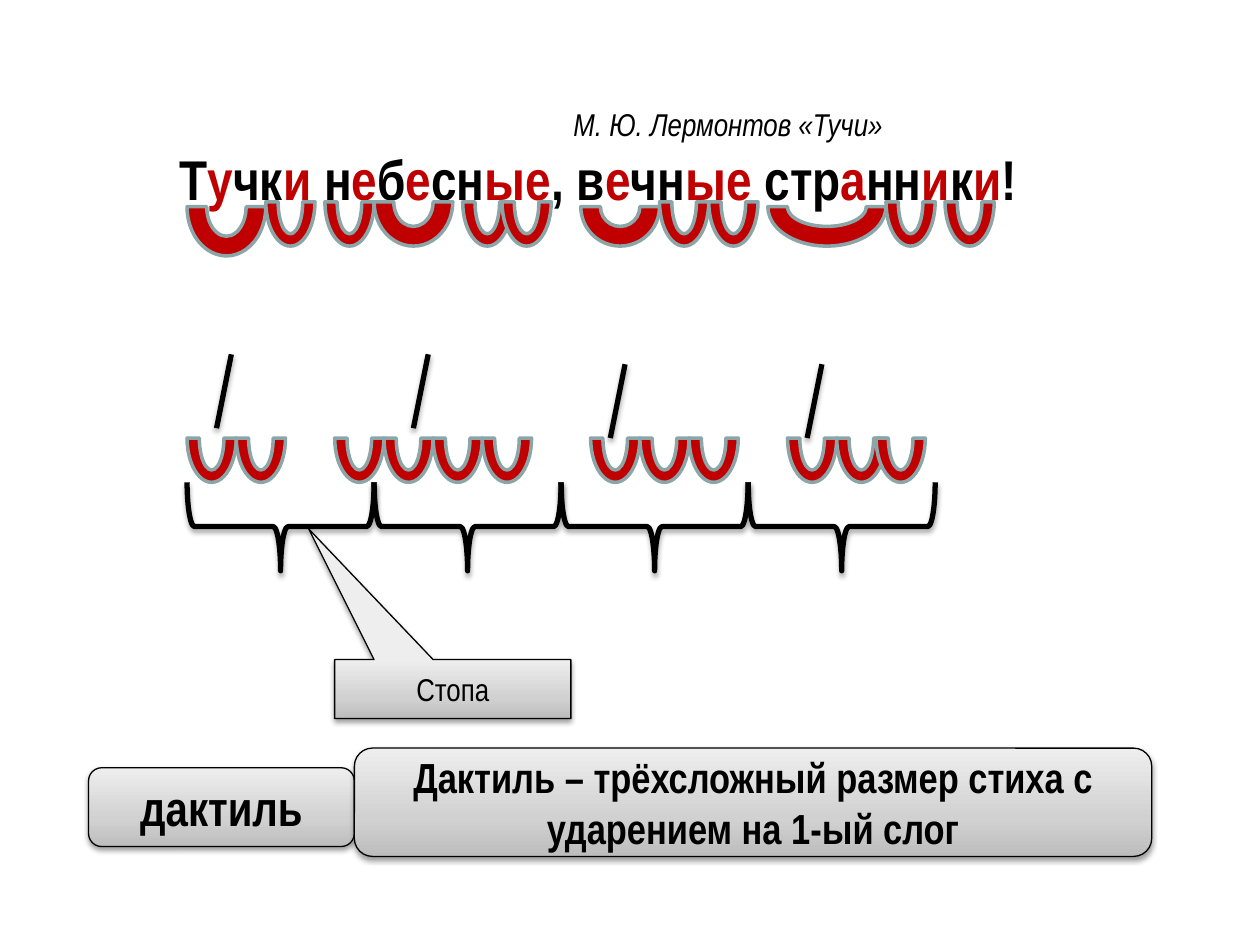
from dataclasses import dataclass
from pptx import Presentation
from pptx.dml.color import RGBColor
from pptx.enum.shapes import MSO_CONNECTOR, MSO_SHAPE
from pptx.enum.text import MSO_ANCHOR, MSO_AUTO_SIZE, PP_ALIGN
from pptx.oxml import parse_xml
from pptx.oxml.ns import nsdecls
from pptx.util import Cm, Pt


@dataclass(frozen=True)
class Theme:
    face: str = "Arial Narrow"
    ink: str = "000000"
    red: str = "C00000"
    rim: str = "8AA6A8"
    greys: tuple = ((0, "BDBDBD"), (35, "D1D1D1"), (100, "EEEEEE"))
    verse: int = 32
    term: int = 28
    rule: int = 24
    note: int = 18


THEME = Theme()
WIDE, HIGH = 128, 96
VERSE = "Т|у|чк|и| н|е|б|е|сн|ые|, в|е|чн|ые| стр|а|нн|и|к|и|!"
VERSE_ARCS = [
    (19, 16, 8, 10), (27, 16, 5, 9), (33, 16, 5, 9), (38, 16, 8, 9),
    (47, 16, 5, 9), (51, 16, 5, 9), (59, 17, 8, 8), (67, 16, 5, 9),
    (72, 16, 5, 9), (78, 17, 12, 8), (90, 16, 5, 9), (96, 16, 5, 9),
]
FOOT_ARCS = [19, 24, 34, 39, 44, 49, 60, 65, 70, 80, 85, 89]
STRESS = [(22, 36), (42, 36), (62, 37), (82, 37)]


def unit(num):
    return Cm(num * 25.4 / WIDE)


def place(*nums):
    return [unit(num) for num in nums]


def apply(item, form):
    for name, value in form.items():
        setattr(item, name, value)


def effect(shape, alpha=0, blur=3.1, dist=1.8):
    shade = ""
    if alpha:
        shade = (
            f'<a:outerShdw blurRad="{Pt(blur)}" dist="{Pt(dist)}" dir="5400000" '
            f'rotWithShape="0"><a:srgbClr val="{THEME.ink}">'
            f'<a:alpha val="{alpha * 1000}"/></a:srgbClr></a:outerShdw>'
        )
    xml = f'<a:effectLst {nsdecls("a")}>{shade}</a:effectLst>'
    shape._element.spPr.append(parse_xml(xml))


def outline(shape, color, width):
    shape.line.color.rgb = RGBColor.from_string(color)
    shape.line.width = Pt(width)


def blend(shape):
    stops = "".join(
        f'<a:gs pos="{pos * 1000}"><a:srgbClr val="{color}"/></a:gs>'
        for pos, color in THEME.greys
    )
    xml = (
        f'<a:gradFill {nsdecls("a")} rotWithShape="1"><a:gsLst>{stops}</a:gsLst>'
        '<a:lin ang="16200000" scaled="0"/></a:gradFill>'
    )
    shape._element.spPr.prstGeom.addnext(parse_xml(xml))


def write(line, text, size, color=THEME.ink, **form):
    run = line.add_run()
    run.text = text
    apply(run.font, {"name": THEME.face, "size": Pt(size), **form})
    run.font.color.rgb = RGBColor.from_string(color)


def add_text(slide, box):
    frame = slide.shapes.add_textbox(*place(*box)).text_frame
    apply(frame, {"word_wrap": True, "auto_size": MSO_AUTO_SIZE.SHAPE_TO_FIT_TEXT})
    return frame.paragraphs[0]


def add_arc(slide, box):
    arc = slide.shapes.add_shape(MSO_SHAPE.BLOCK_ARC, *place(*box))
    arc.rotation = 180
    arc.fill.solid()
    arc.fill.fore_color.rgb = RGBColor.from_string(THEME.red)
    outline(arc, THEME.rim, 2)
    effect(arc)


def add_stress(slide, left, top):
    ends = place(left + 1.5, top, left, top + 7.5)
    mark = slide.shapes.add_connector(MSO_CONNECTOR.STRAIGHT, *ends)
    outline(mark, THEME.ink, 3)
    effect(mark, 35)


def add_brace(slide, left):
    brace = slide.shapes.add_shape(MSO_SHAPE.RIGHT_BRACE, *place(left, 44, 9, 19))
    brace.rotation = 90
    brace.fill.background()
    outline(brace, THEME.ink, 3)
    effect(brace, 35)


def add_panel(slide, kind, box, text, size, **form):
    panel = slide.shapes.add_shape(kind, *place(*box))
    blend(panel)
    outline(panel, THEME.ink, 0.75)
    effect(panel, 38, dist=1.6)
    apply(panel.text_frame, {"word_wrap": True, "vertical_anchor": MSO_ANCHOR.MIDDLE})
    line = panel.text_frame.paragraphs[0]
    line.alignment = PP_ALIGN.CENTER
    write(line, text, size, **form)
    return panel


def main():
    deck = Presentation()
    apply(deck, {"slide_width": unit(WIDE), "slide_height": unit(HIGH)})
    slide = deck.slides.add_slide(deck.slide_layouts[6])

    verse = add_text(slide, (17, 14, 96, 8.2))
    for num, part in enumerate(VERSE.split("|")):
        color = THEME.red if num % 2 else THEME.ink
        write(verse, part, THEME.verse, color, bold=True)

    for box in VERSE_ARCS + [(left, 40, 5, 9) for left in FOOT_ARCS]:
        add_arc(slide, box)
    for left, top in STRESS:
        add_stress(slide, left, top)
    for num in range(4):
        add_brace(slide, 24 + 19 * num)

    foot = add_panel(slide, MSO_SHAPE.RECTANGULAR_CALLOUT, (34, 67, 24, 6),
                     "Стопа", THEME.note)
    foot.adjustments[0], foot.adjustments[1] = -0.61, -2.71
    add_panel(slide, MSO_SHAPE.ROUNDED_RECTANGLE, (9, 78, 27, 8),
              "дактиль", THEME.term, bold=True)
    add_panel(slide, MSO_SHAPE.ROUNDED_RECTANGLE, (36, 76, 81, 11),
              "Дактиль – трёхсложный размер стиха с ударением на 1-ый слог",
              THEME.rule, bold=True)

    author = add_text(slide, (57, 10, 54, 5.1))
    write(author, "М. Ю. Лермонтов «Тучи»", THEME.note, italic=True)
    deck.save("out.pptx")


if __name__ == "__main__":
    main()
